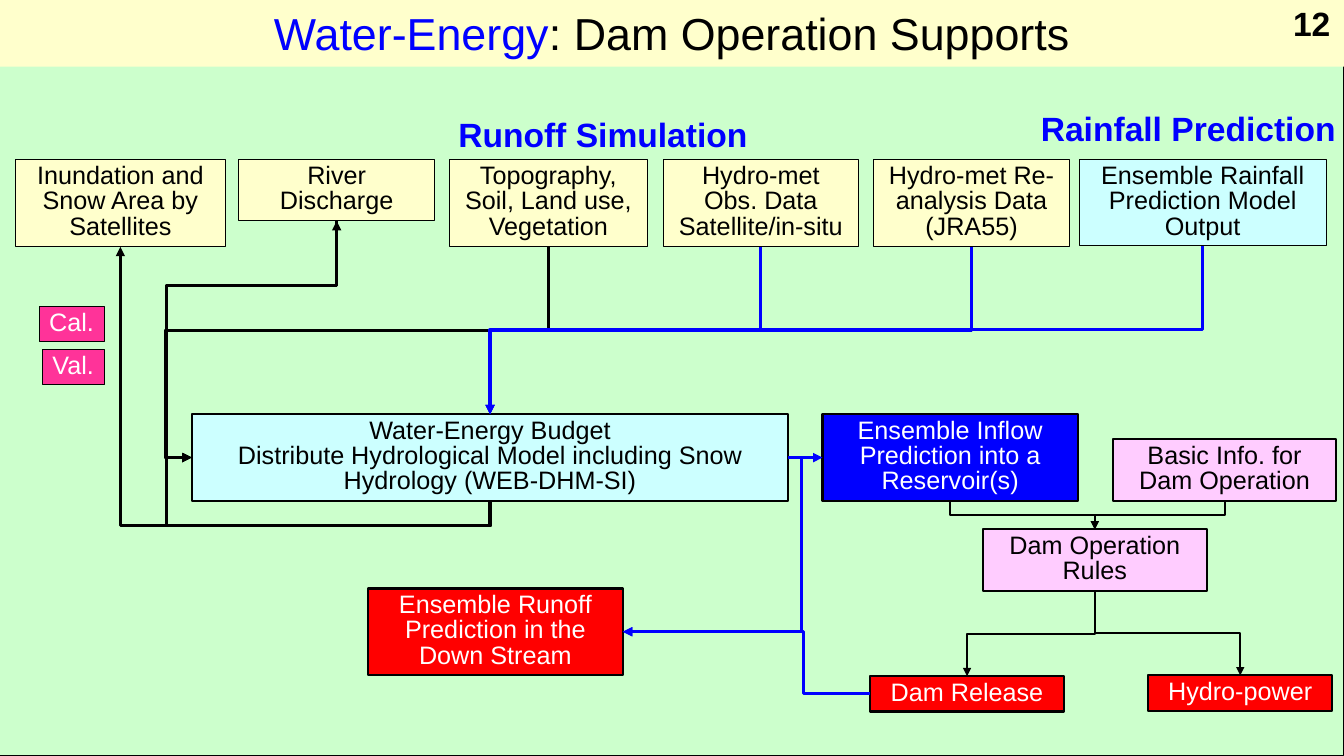
from pptx import Presentation
from pptx import util as u
from pptx.dml.color import RGBColor
from pptx.enum import shapes, text
from pptx.oxml import ns
from lxml import etree

BLACK, WHITE, BLUE, RED = "000000", "FFFFFF", "0000FF", "FF0000"
CREAM, AQUA, PINK, ROSE, GREEN = "FFFFCC", "CCFFFF", "FFCCFF", "FF3399", "CCFFCC"
TOP, LEFT, LOW, RIGHT = range(4)
BUS, SPINE = 8.33, 4.19

BOXES = {
    "area": ("Inundation and Snow Area by Satellites", 0.38, 4.02, 5.31, 2.2, CREAM, 0.75),
    "river": ("River Discharge", 6.02, 4.02, 4.93, 1.55, CREAM, 0.75),
    "land": ("Topography, Soil, Land use, Vegetation", 11.33, 4.02, 4.98, 2.2, CREAM, 0.75),
    "obs": ("Hydro-met Obs. Data\nSatellite/in-situ", 16.71, 4.02, 4.93, 2.2, CREAM, 0.75),
    "past": ("Hydro-met Re-analysis Data\n(JRA55)", 22.02, 4.02, 4.93, 2.2, CREAM, 0.75),
    "rain": ("Ensemble Rainfall Prediction Model Output", 27.2, 4.02, 6.22, 2.18, AQUA, 0.75),
    "model": ("Water-Energy Budget\nDistribute Hydrological Model including Snow "
              "Hydrology (WEB-DHM-SI)", 4.83, 10.44, 15.04, 2.18, AQUA, 1.5),
    "inflow": ("Ensemble Inflow Prediction into a Reservoir(s)", 20.73, 10.44, 6.43, 2.18, BLUE, 1.5),
    "basic": ("Basic Info. for Dam Operation", 28.04, 11.07, 5.64, 1.55, PINK, 1.5),
    "rules": ("Dam Operation Rules", 24.77, 13.34, 5.64, 1.55, PINK, 1.5),
    "down": ("Ensemble Runoff Prediction in the Down Stream", 9.27, 14.83, 6.43, 2.18, RED, 1.5),
    "release": ("Dam Release", 21.92, 17.04, 4.9, 0.89, RED, 1.5),
    "power": ("Hydro-power", 28.93, 17.02, 4.65, 0.89, RED, 1.5),
    "cal": ("Cal.", 0.99, 7.72, 1.65, 0.89, ROSE, 0.75),
    "val": ("Val.", 1.07, 8.81, 1.57, 0.89, ROSE, 0.75),
}

BENDS = [
    ("land", LOW, "model", LEFT, [BUS, SPINE], BLACK, 2.25),
    ("river", LOW, "model", LEFT, [7.19, SPINE], BLACK, 2.25),
    ("obs", LOW, "model", LEFT, [BUS, SPINE], BLACK, 2.25),
    ("past", LOW, "model", LEFT, [BUS, SPINE], BLACK, 2.25),
    ("model", LOW, "river", LOW, [13.25, SPINE, 7.19], BLACK, 2.25),
    ("model", LOW, "area", LOW, [13.25], BLACK, 2.25),
    ("rain", LOW, "model", TOP, [8.31], BLUE, 2.25),
    ("past", LOW, "model", TOP, [BUS], BLUE, 2.25),
    ("obs", LOW, "model", TOP, [BUS], BLUE, 2.25),
    ("basic", LOW, "rules", TOP, [12.98], BLACK, 1.5),
    ("inflow", LOW, "rules", TOP, [12.98], BLACK, 1.5),
    ("rules", LOW, "power", TOP, [15.95], BLACK, 1.5),
    ("rules", LOW, "release", TOP, [15.97], BLACK, 1.5),
    ("model", RIGHT, "down", RIGHT, [20.19], BLUE, 2.25),
    ("release", LEFT, "down", RIGHT, [20.24], BLUE, 2.25),
]


def color(code):
    """Turn a hex string into a colour."""
    return RGBColor.from_string(code)


def style(run, size, code, bold=False):
    """Format one run."""
    run.font.name = "Arial"
    run.font.size = u.Pt(size)
    run.font.bold = bold
    run.font.color.rgb = color(code)


def rect(slide, x, y, w, h, fill, width):
    """Add a filled rectangle with a black edge."""
    shape = slide.shapes.add_shape(shapes.MSO_SHAPE.RECTANGLE, u.Cm(x), u.Cm(y), u.Cm(w), u.Cm(h))
    shape.shadow.inherit = False
    shape.fill.solid()
    shape.fill.fore_color.rgb = color(fill)
    shape.line.color.rgb = color(BLACK)
    shape.line.width = u.Pt(width)
    return shape


def box(slide, label, x, y, w, h, fill, width):
    """Add a labelled box."""
    shape = rect(slide, x, y, w, h, fill, width)
    frame = shape.text_frame
    frame.text = label
    frame.word_wrap = fill != ROSE
    frame.vertical_anchor = text.MSO_ANCHOR.TOP
    frame.auto_size = text.MSO_AUTO_SIZE.SHAPE_TO_FIT_TEXT
    ink = WHITE if fill in (BLUE, RED, ROSE) else BLACK
    for par in frame.paragraphs:
        par.alignment = text.PP_ALIGN.LEFT if fill == ROSE else text.PP_ALIGN.CENTER
        par.line_spacing = u.Pt(18)
        style(par.runs[0], 18, ink)
    return shape


def note(slide, label, x, y, w, code, align):
    """Add a bold one-line text."""
    shape = slide.shapes.add_textbox(u.Cm(x), u.Cm(y), u.Cm(w), u.Cm(1.28))
    frame = shape.text_frame
    frame.text = label
    frame.word_wrap = False
    par = frame.paragraphs[0]
    par.alignment = align
    style(par.runs[0], 24, code, True)


def arrow(link, code, width):
    """Give a connector its colour, width and arrowhead."""
    link.line.color.rgb = color(code)
    link.line.width = u.Pt(width)
    etree.SubElement(link.line._get_or_add_ln(), ns.qn("a:tailEnd"), type="triangle")
    etree.SubElement(link._element.spPr, ns.qn("a:effectLst"))


def site(name, side):
    """Find the middle of a side of a named box."""
    x, y, w, h = BOXES[name][1:5]
    return [(x + w / 2, y), (x, y + h / 2), (x + w / 2, y + h), (x + w, y + h / 2)][side]


def bend(slide, start, out, end, into, stops, code, width):
    """Add an elbow arrow that turns at the given stops."""
    a, b = site(start, out), site(end, into)
    gap = [b[0] - a[0], b[1] - a[1]]
    down = out in (TOP, LOW)
    ends = [*a, *b]
    if down:
        mid = [(a[0] + b[0]) / 2, (a[1] + b[1]) / 2]
        half = [abs(gap[1]) / 2, abs(gap[0]) / 2]
        ends = [mid[0] - half[0], mid[1] - half[1], mid[0] + half[0], mid[1] + half[1]]
    link = slide.shapes.add_connector(shapes.MSO_CONNECTOR.ELBOW, *map(u.Cm, ends))
    props = link._element.spPr
    if down:
        form = props.find(ns.qn("a:xfrm"))
        form.set("rot", str((90 if gap[0] < 0 else 270) * 60000))
        form.set("flipH", str(int((gap[0] < 0) == (gap[1] < 0))))
    geom = props.find(ns.qn("a:prstGeom"))
    geom.set("prst", f"bentConnector{len(stops) + 2}")
    guides = geom.find(ns.qn("a:avLst"))
    for i, stop in enumerate(stops):
        axis = (i + down) % 2
        ratio = round((stop - a[axis]) / gap[axis] * 100000)
        etree.SubElement(guides, ns.qn("a:gd"), name=f"adj{i + 1}", fmla=f"val {ratio}")
    arrow(link, code, width)


def head(slide):
    """Fill the title band and bring it to the front."""
    title = slide.shapes.title
    title.left, title.top, title.width, title.height = map(u.Cm, (0, -0.05, 33.87, 1.73))
    title.fill.solid()
    title.fill.fore_color.rgb = color(CREAM)
    frame = title.text_frame
    frame.auto_size = text.MSO_AUTO_SIZE.NONE
    frame.vertical_anchor = text.MSO_ANCHOR.MIDDLE
    par = frame.paragraphs[0]
    par.alignment = text.PP_ALIGN.CENTER
    for part, code in (("Water-Energy", BLUE), (": Dam Operation Supports", BLACK)):
        run = par.add_run()
        run.text = part
        style(run, 32, code)
    slide.shapes._spTree.append(title._element)


def main():
    """Build the slide and save it."""
    deck = Presentation()
    deck.slide_width, deck.slide_height = u.Cm(33.87), u.Cm(19.05)
    slide = deck.slides.add_slide(deck.slide_layouts[5])
    rect(slide, 0, 1.19, 33.87, 17.86, GREEN, 0.75)
    made = {name: box(slide, *data) for name, data in BOXES.items()}
    for data in BENDS:
        bend(slide, *data)
    link = slide.shapes.add_connector(shapes.MSO_CONNECTOR.STRAIGHT, 0, 0, 0, 0)
    link.begin_connect(made["model"], RIGHT)
    link.end_connect(made["inflow"], LEFT)
    arrow(link, BLUE, 2.25)
    note(slide, "Rainfall Prediction", 25.98, 2.59, 8, BLUE, text.PP_ALIGN.LEFT)
    note(slide, "Runoff Simulation", 11.3, 2.74, 7.87, BLUE, text.PP_ALIGN.LEFT)
    head(slide)
    note(slide, "12", 31.78, -0.05, 2, BLACK, text.PP_ALIGN.RIGHT)
    deck.save("out.pptx")


if __name__ == "__main__":
    main()
